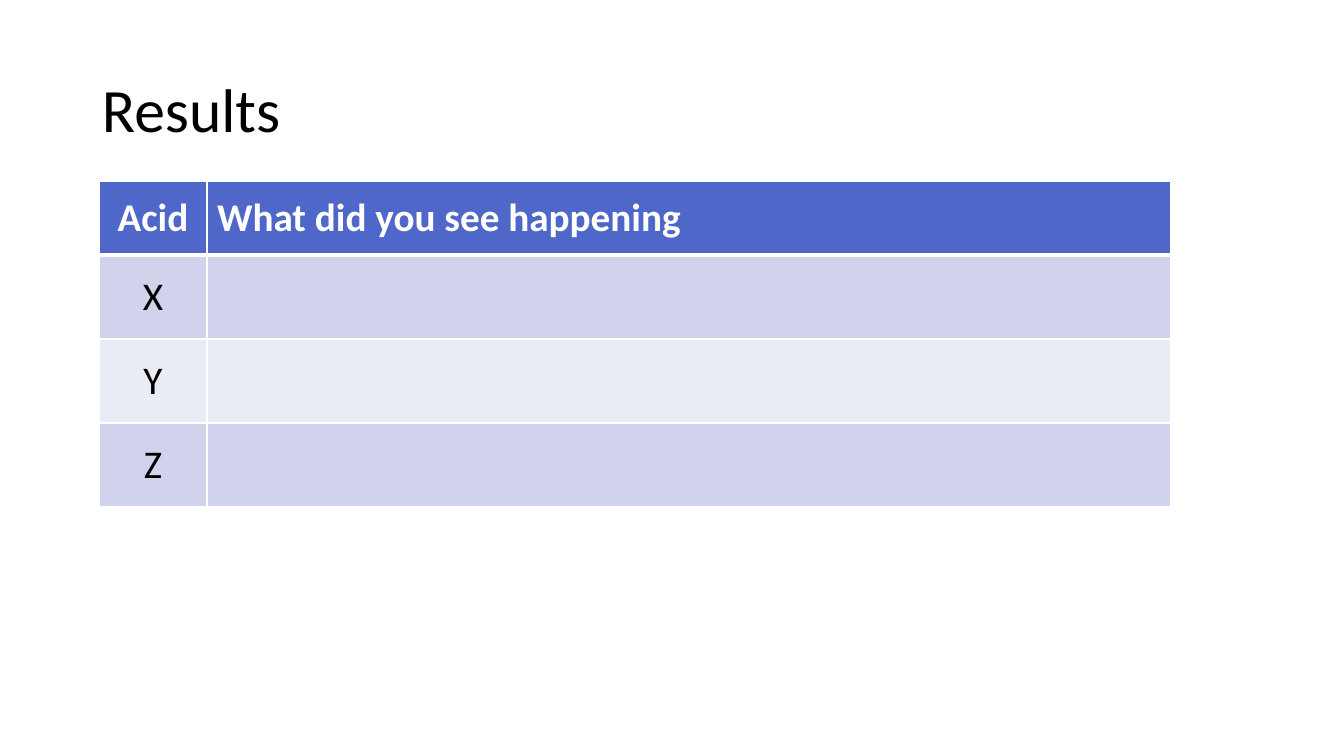
import pptx
import pptx.dml.color
import pptx.enum.text
import pptx.oxml
import pptx.oxml.ns
import pptx.util

TITLE = "Results"
RESULTS = [
    ("Acid", "What did you see happening"),
    ("X", ""),
    ("Y", ""),
    ("Z", ""),
]
COLORS = {
    "ink": "000000",
    "white": "FFFFFF",
    "header": "4E67C8",
    "band_dark": "D0D3EB",
    "band_light": "E9EBF5",
}
FONT = "Calibri"

PX = 9071.43  # EMU in one px, at 100.8 px to the inch
SLIDE_SIZE = (1344, 756)
TITLE_BOX = (92, 40, 1159, 146)
TABLE_LEFT, TABLE_TOP = 99, 181
COLUMN_WIDTHS = (108, 964)
ROW_HEIGHTS = (74, 84, 84, 84)

ALIGN = pptx.enum.text.PP_ALIGN
MIDDLE = pptx.enum.text.MSO_ANCHOR.MIDDLE


def emu(px):
    return pptx.util.Emu(round(px * PX))


def rgb(name):
    return pptx.dml.color.RGBColor.from_string(COLORS[name])


def write(paragraph, text, color, **formats):
    run = paragraph.add_run()
    run.text = text
    run.font.color.rgb = rgb(color)
    for attribute, value in {"name": FONT, **formats}.items():
        setattr(run.font, attribute, value)


def border_cell(cell, widths):
    """Draw white cell borders; widths maps a side (L, R, T, B) to points."""
    properties = cell._tc.get_or_add_tcPr()
    for position, (side, points) in enumerate(widths.items()):
        line = pptx.oxml.parse_xml(
            f'<a:ln{side} {pptx.oxml.ns.nsdecls("a")} w="{pptx.util.Pt(points)}">'
            f'<a:solidFill><a:srgbClr val="{COLORS["white"]}"/></a:solidFill>'
            f'</a:ln{side}>'
        )
        properties.insert(position, line)


def add_title(slide):
    frame = slide.shapes.add_textbox(*map(emu, TITLE_BOX)).text_frame
    frame.word_wrap = True
    frame.vertical_anchor = MIDDLE
    heading = frame.paragraphs[0]
    heading.line_spacing = 0.9
    write(heading, TITLE, "ink", size=pptx.util.Pt(44))


def add_results(slide):
    bounds = (TABLE_LEFT, TABLE_TOP, sum(COLUMN_WIDTHS), sum(ROW_HEIGHTS))
    table = slide.shapes.add_table(
        len(RESULTS), len(COLUMN_WIDTHS), *map(emu, bounds)
    ).table
    for column, width in zip(table.columns, COLUMN_WIDTHS):
        column.width = emu(width)
    for row, height in zip(table.rows, ROW_HEIGHTS):
        row.height = emu(height)

    for r, texts in enumerate(RESULTS):
        is_header = r == 0
        band = "header" if is_header else ("band_light", "band_dark")[r % 2]
        for c, text in enumerate(texts):
            cell = table.cell(r, c)
            cell.fill.solid()
            cell.fill.fore_color.rgb = rgb(band)
            cell.vertical_anchor = MIDDLE
            border_cell(cell, {
                "L": 1,
                "R": 1,
                "T": 3 if r == 1 else 1,
                "B": 3 if is_header else 1,
            })
            if text:
                paragraph = cell.text_frame.paragraphs[0]
                paragraph.alignment = ALIGN.CENTER if c == 0 else ALIGN.LEFT
                write(paragraph, text, "white" if is_header else "ink",
                      size=pptx.util.Pt(28), bold=is_header)


def main():
    deck = pptx.Presentation()
    deck.slide_width, deck.slide_height = map(emu, SLIDE_SIZE)
    slide = deck.slides.add_slide(deck.slide_layouts[6])
    add_title(slide)
    add_results(slide)
    deck.save("out.pptx")


if __name__ == "__main__":
    main()
